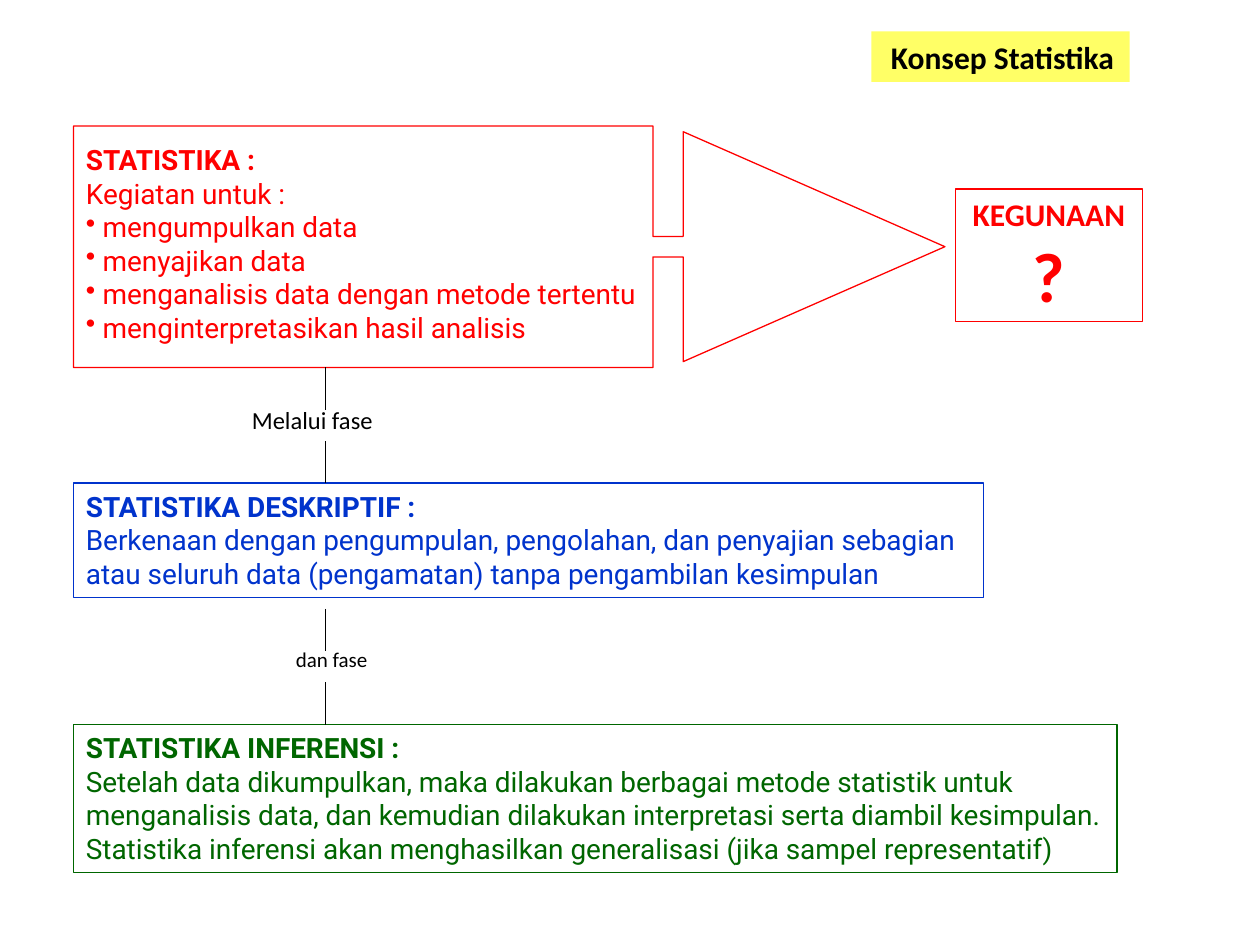
import dataclasses

import lxml.etree
import pptx
import pptx.dml.color
import pptx.enum.shapes
import pptx.enum.text
import pptx.oxml.ns
import pptx.util


@dataclasses.dataclass(frozen=True)
class Theme:
    red: str = "FF0000"
    blue: str = "0033CC"
    green: str = "006600"
    black: str = "000000"
    yellow: str = "FFFF66"
    body_font: str = "Roboto"
    label_font: str = "Calibri"
    small: int = 12
    label: int = 14
    body: int = 16
    heading: int = 18
    symbol: int = 40
    line: float = 0.75


THEME = Theme()
SHAPE = pptx.enum.shapes.MSO_SHAPE
LEFT = pptx.enum.text.PP_ALIGN.LEFT
CENTER = pptx.enum.text.PP_ALIGN.CENTER
WIDTH, HEIGHT = 10, 7.5
COLUMNS, ROWS = 120, 90
MARGIN = 7
AXIS = 31


def x(columns):
    return pptx.util.Inches(columns * WIDTH / COLUMNS)


def y(rows):
    return pptx.util.Inches(rows * HEIGHT / ROWS)


def place(left, top, width, height):
    return x(left), y(top), x(width), y(height)


def rgb(color):
    return pptx.dml.color.RGBColor.from_string(color)


def add_outline(s, kind, box, line=None, fill=None):
    sp = s.shapes.add_shape(kind, *place(*box))
    sp.shadow.inherit = False
    if fill:
        sp.fill.solid()
        sp.fill.fore_color.rgb = rgb(fill)
    else:
        sp.fill.background()
    if line:
        sp.line.color.rgb = rgb(line)
        sp.line.width = pptx.util.Pt(THEME.line)
    else:
        sp.line.fill.background()
    return sp


def write(sp, lines, color, font, size, bold_lines=0, align=LEFT):
    tf = sp.text_frame
    tf.text = "\n".join(lines)
    tf.word_wrap = False
    tf.auto_size = pptx.enum.text.MSO_AUTO_SIZE.SHAPE_TO_FIT_TEXT
    tf.vertical_anchor = pptx.enum.text.MSO_ANCHOR.TOP
    for i, p in enumerate(tf.paragraphs):
        p.alignment = align
        f = p.runs[0].font
        f.name = font
        f.size = pptx.util.Pt(size)
        f.bold = i < bold_lines
        f.color.rgb = rgb(color)
    return tf


def add_bullet(p):
    pPr = p._p.get_or_add_pPr()
    bu = lxml.etree.SubElement(pPr, pptx.oxml.ns.qn("a:buChar"))
    bu.set("char", "•")


def add_text(s, box, lines, color, font, size, bold_lines=0):
    sp = s.shapes.add_textbox(*place(*box))
    return write(sp, lines, color, font, size, bold_lines)


def add_definition(s, box, lines, color):
    sp = add_outline(s, SHAPE.RECTANGLE, box, color)
    write(sp, lines, color, THEME.body_font, THEME.body, 1)


def add_stem(s, top):
    c = s.shapes.add_connector(
        pptx.enum.shapes.MSO_CONNECTOR.STRAIGHT, x(AXIS), y(top), x(AXIS), y(top + 4)
    )
    c.line.color.rgb = rgb(THEME.black)
    c.line.width = pptx.util.Pt(THEME.line)
    lxml.etree.SubElement(c._element.spPr, pptx.oxml.ns.qn("a:effectLst"))


def add_phase(s, top, box, label, size):
    add_text(s, box, [label], THEME.black, THEME.label_font, size)
    for stem_top in (top, top + 7):
        add_stem(s, stem_top)


def add_activities(s):
    tf = add_text(
        s,
        (MARGIN, 13, 55.6, 20.6),
        [
            "STATISTIKA :",
            "Kegiatan untuk :",
            " mengumpulkan data",
            " menyajikan data",
            " menganalisis data dengan metode tertentu",
            " menginterpretasikan hasil analisis",
        ],
        THEME.red, THEME.body_font, THEME.body, 1,
    )
    for p in tf.paragraphs[2:]:
        add_bullet(p)
    sp = add_outline(s, SHAPE.RIGHT_ARROW_CALLOUT, (MARGIN, 12, 83, 23), THEME.red)
    for i, value in enumerate((0.085, 0.476, 1.084, 0.665)):
        sp.adjustments[i] = value


def add_purpose(s):
    sp = add_outline(s, SHAPE.RECTANGLE, (91, 18, 17.8, 12.6), THEME.red)
    tf = write(sp, ["KEGUNAAN", "?"], THEME.red, THEME.label_font,
               THEME.heading, 2, CENTER)
    tf.paragraphs[1].runs[0].font.size = pptx.util.Pt(THEME.symbol)


def add_title(s):
    sp = add_outline(s, SHAPE.RECTANGLE, (83, 3, 24.6, 4.8), fill=THEME.yellow)
    write(sp, [" Konsep Statistika"], THEME.black, THEME.label_font, THEME.heading, 1)


def main():
    prs = pptx.Presentation()
    prs.slide_width = pptx.util.Inches(WIDTH)
    prs.slide_height = pptx.util.Inches(HEIGHT)
    s = prs.slides.add_slide(prs.slide_layouts[6])
    add_activities(s)
    add_purpose(s)
    add_definition(s, (MARGIN, 46, 86.7, 10.9), [
        "STATISTIKA DESKRIPTIF :",
        "Berkenaan dengan pengumpulan, pengolahan, dan penyajian sebagian",
        "atau seluruh data (pengamatan) tanpa pengambilan kesimpulan",
    ], THEME.blue)
    add_definition(s, (MARGIN, 69, 99.4, 14.1), [
        "STATISTIKA INFERENSI :",
        "Setelah data dikumpulkan, maka dilakukan berbagai metode statistik untuk",
        "menganalisis data, dan kemudian dilakukan interpretasi serta diambil kesimpulan.",
        "Statistika inferensi akan menghasilkan generalisasi (jika sampel representatif)",
    ], THEME.green)
    add_phase(s, 35, (22.8, 38, 14.5, 4), "Melalui fase", THEME.label)
    add_phase(s, 58, (27, 61, 10, 3.6), "dan fase", THEME.small)
    add_title(s)
    prs.save("out.pptx")


if __name__ == "__main__":
    main()
